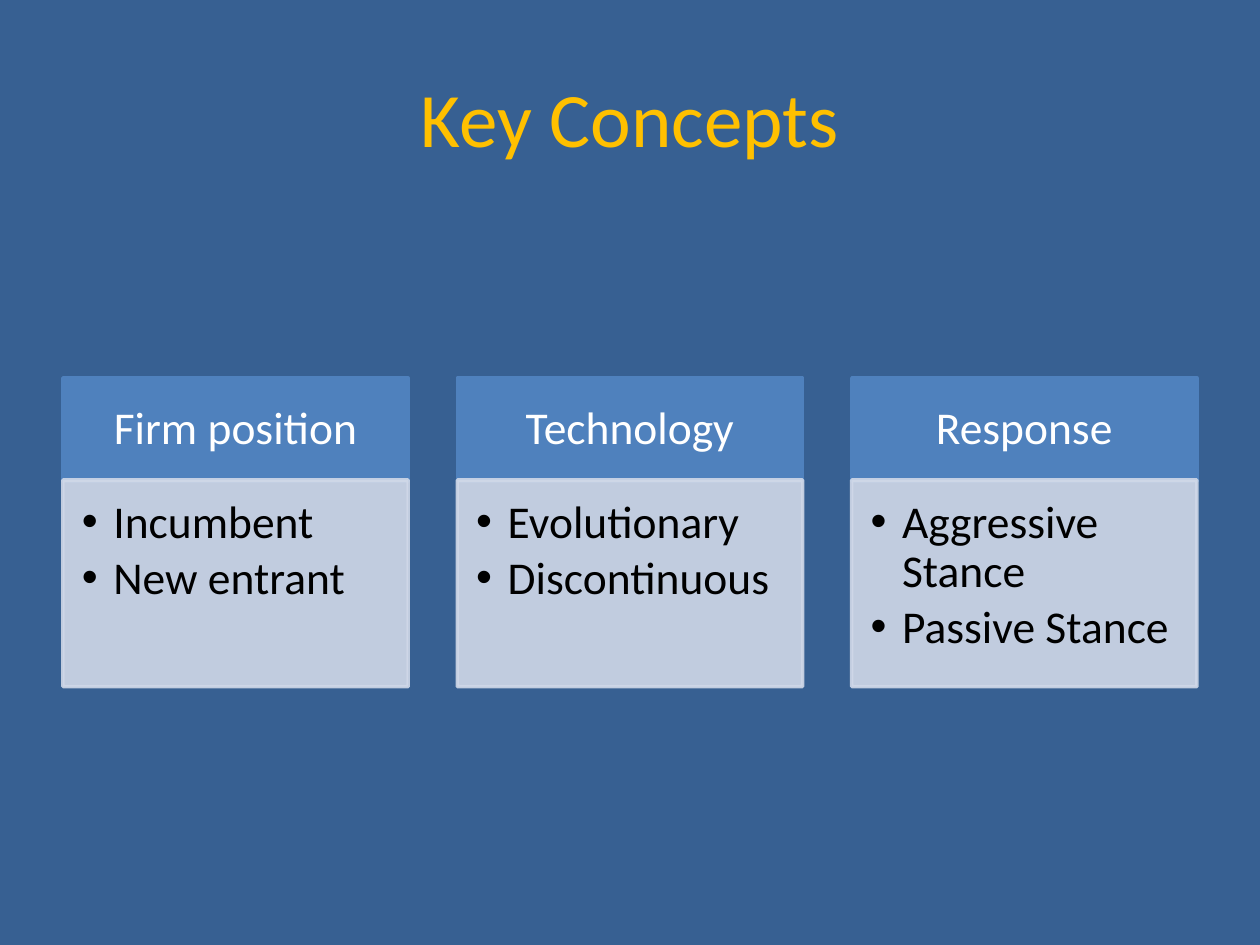
from pptx import Presentation
from pptx.dml.color import RGBColor
from pptx.enum.shapes import MSO_SHAPE
from pptx.enum.text import MSO_ANCHOR as Anchor, PP_ALIGN as Align
from pptx.oxml.ns import qn
from pptx.util import Inches, Pt
from lxml.etree import SubElement

COLORS = {
    "background": "376092",
    "title": "FFC000",
    "header": "4F81BD",
    "panel": "D0D8E8",
    "header_text": "FFFFFF",
    "panel_text": "000000",
}

COLUMNS = [
    ("Firm position", ["Incumbent", "New entrant"]),
    ("Technology", ["Evolutionary", "Discontinuous"]),
    ("Response", ["Aggressive Stance", "Passive Stance"]),
]

LEFT, TOP = 0.5, 3
COLUMN_WIDTH, COLUMN_GAP = 2.74, 0.39
HEADER_HEIGHT, PANEL_HEIGHT = 0.82, 1.64
PANEL_TOP = 3.81


class SlideBuilder:
    font = "Calibri"
    title_size = 44
    body_size = 26

    def __init__(self, slide):
        self.slide = slide

    def color(self, name):
        return RGBColor.from_string(COLORS[name])

    def background(self, name):
        fill = self.slide.background.fill
        fill.solid()
        fill.fore_color.rgb = self.color(name)

    def set_text(self, shape, lines, size, color, align, anchor, insets):
        frame = shape.text_frame
        frame.word_wrap = True
        frame.vertical_anchor = anchor
        (frame.margin_left, frame.margin_top,
         frame.margin_right, frame.margin_bottom) = map(Inches, insets)
        frame.text = "\n".join(lines)
        for paragraph in frame.paragraphs:
            paragraph.alignment = align
            for run in paragraph.runs:
                run.font.name = self.font
                run.font.size = Pt(size)
                run.font.color.rgb = self.color(color)
        return frame.paragraphs

    def title(self, text, left, top, width, height):
        box = self.slide.shapes.add_textbox(*map(Inches, (left, top, width, height)))
        self.set_text(box, [text], self.title_size, "title", Align.CENTER,
                      Anchor.MIDDLE, (0.1, 0.05, 0.1, 0.05))

    def rectangle(self, left, top, width, height, color, opacity=100):
        shape = self.slide.shapes.add_shape(
            MSO_SHAPE.RECTANGLE, *map(Inches, (left, top, width, height)))
        shape.shadow.inherit = False
        shape.line.width = Pt(2)
        for fill in (shape.fill, shape.line.fill):
            fill.solid()
            fill.fore_color.rgb = self.color(color)
        if opacity < 100:
            for element in shape.element.spPr.iter(qn("a:srgbClr")):
                SubElement(element, qn("a:alpha"), val=str(opacity * 1000))
        return shape

    def header(self, text, left):
        shape = self.rectangle(left, TOP, COLUMN_WIDTH, HEADER_HEIGHT, "header")
        paragraphs = self.set_text(shape, [text], self.body_size, "header_text",
                                   Align.CENTER, Anchor.MIDDLE, (0.2, 0.12, 0.2, 0.12))
        paragraphs[0].line_spacing = 0.9

    def panel(self, items, left):
        shape = self.rectangle(left, PANEL_TOP, COLUMN_WIDTH, PANEL_HEIGHT, "panel", 90)
        paragraphs = self.set_text(shape, items, self.body_size, "panel_text",
                                   Align.LEFT, Anchor.TOP, (0.15, 0.15, 0.2, 0.23))
        for paragraph in paragraphs:
            paragraph.line_spacing = 0.9
            paragraph.space_after = Pt(4)
            properties = paragraph._p.get_or_add_pPr()
            properties.set("marL", str(Inches(0.25)))
            properties.set("indent", str(Inches(-0.25)))
            SubElement(properties, qn("a:buFont"), typeface="Arial")
            SubElement(properties, qn("a:buChar"), char="•")


def main():
    presentation = Presentation()
    presentation.slide_width = Inches(10)
    presentation.slide_height = Inches(7.5)
    builder = SlideBuilder(presentation.slides.add_slide(presentation.slide_layouts[6]))
    builder.background("background")
    builder.title("Key Concepts", 0.5, 0.3, 9, 1.25)
    for index, (heading, items) in enumerate(COLUMNS):
        left = LEFT + index * (COLUMN_WIDTH + COLUMN_GAP)
        builder.header(heading, left)
        builder.panel(items, left)
    presentation.save("out.pptx")


if __name__ == "__main__":
    main()
